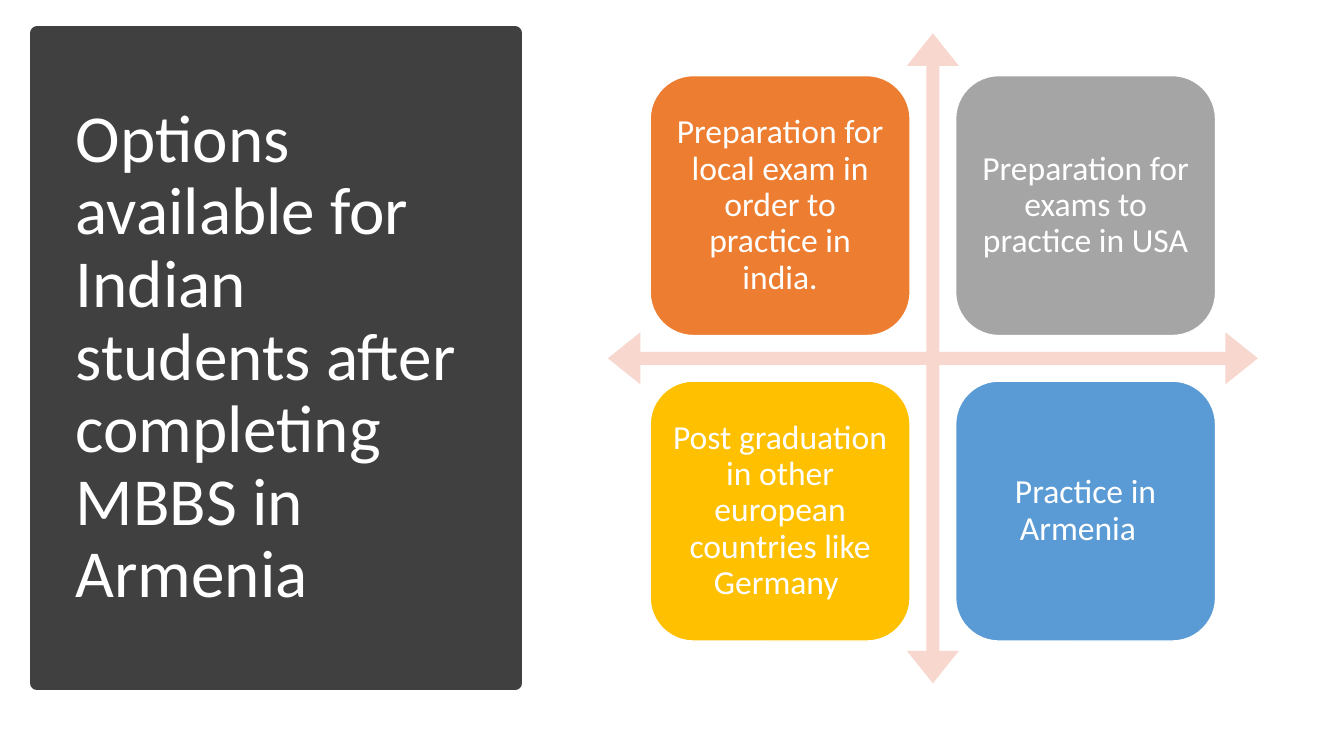
from dataclasses import dataclass

from pptx import Presentation
from pptx.dml.color import RGBColor
from pptx.enum.shapes import MSO_SHAPE
from pptx.enum.text import MSO_ANCHOR, PP_ALIGN
from pptx.util import Cm, Pt

RECTANGLE = MSO_SHAPE.RECTANGLE
ROUNDED = MSO_SHAPE.ROUNDED_RECTANGLE
QUAD_ARROW = MSO_SHAPE.QUAD_ARROW
MIDDLE = MSO_ANCHOR.MIDDLE
LEFT, CENTER = PP_ALIGN.LEFT, PP_ALIGN.CENTER


@dataclass(frozen=True)
class Theme:
    """Colours, line widths and type sizes of the slide."""
    font: str = "Calibri"
    white: str = "FFFFFF"
    panel: str = "404040"
    arrows: str = "F8D7CE"
    tiles: tuple = ("ED7D31", "A5A5A5", "FFC000", "5B9BD5")
    panel_line: int = 10
    tile_line: int = 1
    title_size: int = 48
    tile_size: int = 24


THEME = Theme()
TITLE = "Options available for Indian students after completing MBBS in Armenia"
OPTIONS = (
    "Preparation for local exam in order to practice in india.",
    "Preparation for exams to practice in USA",
    "Post graduation in other european countries like Germany ",
    "Practice in Armenia  ",
)


def add_block(page, kind, box, fill, line=None, width=0):
    """Add a filled preset shape in a box given in centimetres."""
    shape = page.shapes.add_shape(kind, *(Cm(length) for length in box))
    shape.shadow.inherit = False
    shape.fill.solid()
    shape.fill.fore_color.rgb = RGBColor.from_string(fill)
    if line:
        shape.line.color.rgb = RGBColor.from_string(line)
        shape.line.width = Pt(width)
    else:
        shape.line.fill.background()
    return shape


def write_text(shape, text, size, align, side, edge):
    """Write one white paragraph in a shape, with side and edge margins."""
    frame = shape.text_frame
    frame.text = text
    frame.word_wrap = True
    frame.vertical_anchor = MIDDLE
    frame.margin_left = frame.margin_right = Cm(side)
    frame.margin_top = frame.margin_bottom = Cm(edge)
    para = frame.paragraphs[0]
    para.alignment = align
    para.line_spacing = 0.9
    font = para.runs[0].font
    font.name = THEME.font
    font.size = Pt(size)
    font.color.rgb = RGBColor.from_string(THEME.white)


def add_title_panel(page, box):
    """Draw the dark panel that carries the title."""
    panel = add_block(page, RECTANGLE, box, THEME.panel, THEME.panel, THEME.panel_line)
    write_text(panel, TITLE, THEME.title_size, LEFT, side=0.97, edge=1)


def add_option_matrix(page, left, top, size):
    """Draw crossed arrows and a two by two grid of option tiles."""
    arrows = add_block(page, QUAD_ARROW, (left, top, size, size), THEME.arrows)
    for index, value in enumerate((0.02, 0.04, 0.05)):
        arrows.adjustments[index] = value
    tile = 0.4 * size
    inset = 0.065 * size
    step = size - 2 * inset - tile
    for index, (option, fill) in enumerate(zip(OPTIONS, THEME.tiles)):
        row, column = divmod(index, 2)
        box = (left + inset + column * step, top + inset + row * step, tile, tile)
        shape = add_block(page, ROUNDED, box, fill, THEME.white, THEME.tile_line)
        write_text(shape, option, THEME.tile_size, CENTER, side=0.25, edge=0.25)


def main():
    """Build and save the deck."""
    deck = Presentation()
    deck.slide_width, deck.slide_height = Cm(33.87), Cm(19.05)
    page = deck.slides.add_slide(deck.slide_layouts[6])
    add_title_panel(page, (0.94, 0.84, 12.04, 16.38))
    add_option_matrix(page, left=15.32, top=0.84, size=16.38)
    deck.save("out.pptx")


if __name__ == "__main__":
    main()
